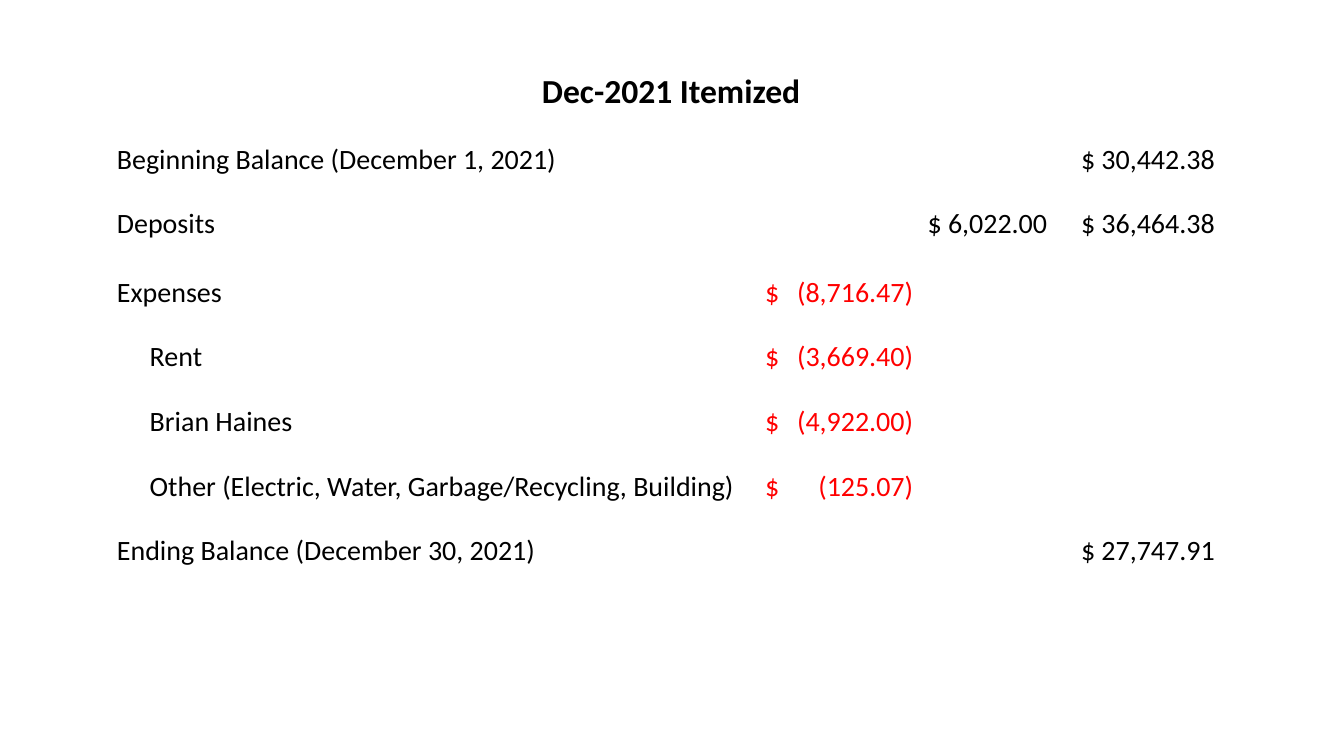
from lxml import etree
from pptx import Presentation
from pptx.dml.color import RGBColor
from pptx.enum import text as t
from pptx.oxml.ns import qn
from pptx.util import Cm, Pt

BLACK = RGBColor(0, 0, 0)
RED = RGBColor(255, 0, 0)
EDGE, PAD, STEP = 0.03, 0.14, 0.62
TAB = 2.8

cols = [12.14, 3.07, 2.9, 2.9]
heights = [1.45, 1.22, 1.22, 1.3, 1.22, 1.22, 1.22, 1.22]

# label, indent level, expense, deposit, balance
rows = [
    ("Beginning Balance (December 1, 2021)", 0, "", "", "$ 30,442.38"),
    ("Deposits", 0, "", "$ 6,022.00", "$ 36,464.38"),
    ("Expenses", 0, "$\t(8,716.47)", "", ""),
    ("Rent", 1, "$\t(3,669.40)", "", ""),
    ("Brian Haines", 1, "$\t(4,922.00)", "", ""),
    ("Other (Electric, Water, Garbage/Recycling, Building)", 1,
     "$\t(125.07)", "", ""),
    ("Ending Balance (December 30, 2021)", 0, "", "", "$ 27,747.91"),
]


def write(cell, words, left, size=15, color=BLACK, bold=False):
    cell.margin_left = Cm(left)
    para = cell.text_frame.paragraphs[0]
    para.line_spacing = 0.87
    run = para.add_run()
    run.text = words
    run.font.name = "Calibri"
    run.font.size = Pt(size)
    run.font.bold = bold
    run.font.color.rgb = color
    return para


def add_tab(para, pos):
    """Line up the end of the amount with a right tab stop."""
    stops = etree.SubElement(para._p.get_or_add_pPr(), qn("a:tabLst"))
    etree.SubElement(stops, qn("a:tab"), pos=str(Cm(pos)), algn="r")


prs = Presentation()
prs.slide_width, prs.slide_height = Cm(25.4), Cm(14.29)
slide = prs.slides.add_slide(prs.slide_layouts[6])

frame = slide.shapes.add_table(
    len(heights), len(cols), Cm(2.18), Cm(0.64),
    Cm(sum(cols)), Cm(sum(heights)))
table = frame.table
table.first_row = False
table.horz_banding = False
for col, width in zip(table.columns, cols):
    col.width = Cm(width)
for row, height in zip(table.rows, heights):
    row.height = Cm(height)

for cell in table.iter_cells():
    cell.fill.background()
    cell.vertical_anchor = t.MSO_ANCHOR.BOTTOM
    cell.margin_left = cell.margin_right = cell.margin_top = Cm(EDGE)
    cell.margin_bottom = 0

title = table.cell(0, 0)
title.merge(table.cell(0, 3))
para = write(title, "Dec-2021 Itemized", EDGE, size=18, bold=True)
para.alignment = t.PP_ALIGN.CENTER

for r, (label, level, *sums) in enumerate(rows, 1):
    write(table.cell(r, 0), label, EDGE + level * STEP)
    for c, value in enumerate(sums, 1):
        if value:
            color = RED if c == 1 else BLACK
            para = write(table.cell(r, c), value, PAD, color=color)
            if "\t" in value:
                add_tab(para, TAB)

prs.save("out.pptx")
